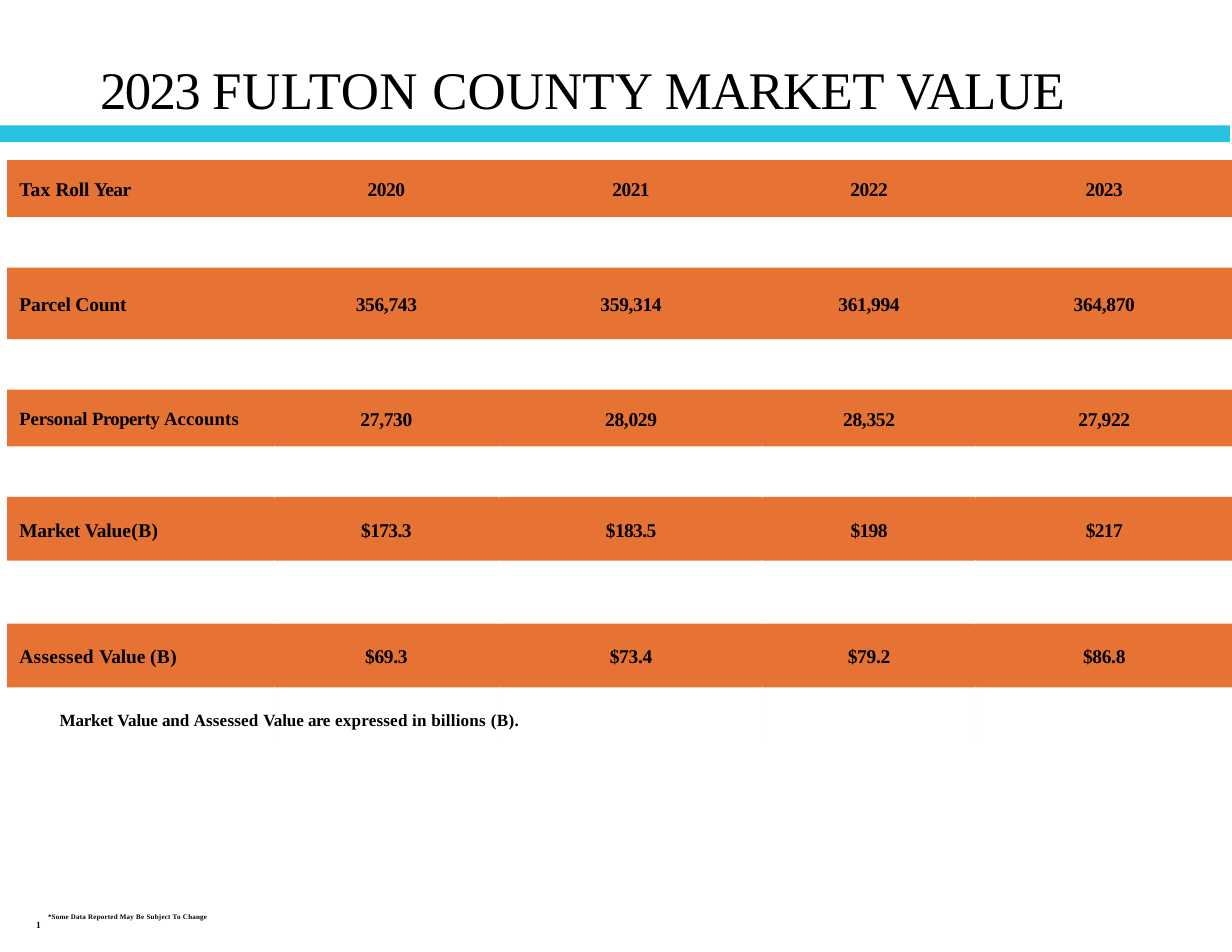
from dataclasses import dataclass

from lxml import etree
from pptx import Presentation
from pptx.dml.color import RGBColor
from pptx.enum.shapes import MSO_SHAPE
from pptx.enum.text import MSO_ANCHOR, MSO_AUTO_SIZE, PP_ALIGN
from pptx.oxml.ns import qn
from pptx.util import Pt

RECTANGLE = MSO_SHAPE.RECTANGLE
TOP = MSO_ANCHOR.TOP
GROW = MSO_AUTO_SIZE.SHAPE_TO_FIT_TEXT
LEFT = PP_ALIGN.LEFT
CENTER = PP_ALIGN.CENTER

FONT = "Times New Roman"
BLACK, WHITE, PALE = "000000", "FFFFFF", "FDFDFD"
ORANGE, CYAN = "E67334", "28C1DF"
PAGE_WIDTH, PAGE_HEIGHT = 792, 612
BAND_LEFT = 4.5
LABEL_LEFT = 11.5
TEXT_HEIGHT = 17.3
COLUMN_CENTERS = (248.4, 405.7, 558.7, 709.9)
SEPARATOR_LEFTS = (176.4, 320.6, 489.8, 627)
SEPARATOR_WIDTH = 0.5
LAST_GAP = 32.5


@dataclass
class Span:
    text: str
    spacing: float


@dataclass
class Band:
    top: float
    height: float
    label: list[Span]
    label_width: float
    values: tuple[str, ...]
    value_spacing: float
    label_size: float = 12.5
    tab: float | None = None

    @property
    def bottom(self) -> float:
        return self.top + self.height

    @property
    def text_top(self) -> float:
        return self.top + self.height / 2 - 9.8


BANDS = [
    Band(103, 36.5, [Span("Tax ", 0.1), Span("Roll ", -0.1), Span("Year", -0.4)], 76.3,
         ("2020", "2021", "2022", "2023"), -0.3),
    Band(172, 46, [Span("Parcel Count", -0.1)], 72,
         ("356,743", "359,314", "361,994", "364,870"), -0.2),
    Band(250.5, 36.5,
         [Span("Personal ", -0.1), Span("Property ", -0.3), Span("Accounts", 0.1)], 145.5,
         ("27,730", "28,029", "28,352", "27,922"), -0.2, label_size=12),
    Band(319.5, 41, [Span("Market ", -0.2), Span("Value\t", -0.1), Span("(B)", 0.3)], 105,
         ("$173.3", "$183.5", "$198", "$217"), -0.4, tab=86.4),
    Band(401, 41, [Span("Assessed ", 0.2), Span("Value ", -0.1), Span("(B)", 0.3)], 108.7,
         ("$69.3", "$73.4", "$79.2", "$86.8"), -0.2),
]
TITLE = [Span("2023 ", -1.1), Span("FULTON ", 0.4), Span("COUNTY ", 0.1),
         Span("MARKET ", -0.4), Span("VALUE", -0.6)]
UNITS_NOTE = [Span("Market ", -0.2), Span("Value and ", -0.1), Span("Assessed ", 0.1),
              Span("Value ", -0.1), Span("are", -0.3), Span(" expressed in billions ", 0.1),
              Span("(B).", 0.2)]
DISCLAIMER = [Span("*Some Data Reported May ", 0.1), Span("Be", 0.2), Span(" Subject ", 0.1),
              Span("To ", 0.2), Span("Change", 0.1)]


def color(value: str) -> RGBColor:
    return RGBColor.from_string(value)


def add_bar(page, left: float, top: float, width: float, height: float, fill: str) -> None:
    bar = page.shapes.add_shape(RECTANGLE, Pt(left), Pt(top), Pt(width), Pt(height))
    bar.shadow.inherit = False
    bar.fill.solid()
    bar.fill.fore_color.rgb = color(fill)
    bar.line.fill.background()


def set_indent(paragraph, margin: float) -> None:
    properties = paragraph._p.get_or_add_pPr()
    properties.set("marL", str(Pt(margin)))
    properties.set("indent", "0")


def add_tab(paragraph, position: float) -> None:
    tabs = etree.SubElement(paragraph._p.get_or_add_pPr(), qn("a:tabLst"))
    etree.SubElement(tabs, qn("a:tab"), pos=str(Pt(position)), algn="l")


def write_spans(paragraph, spans: list[Span], size: float, bold: bool = True) -> None:
    for span in spans:
        run = paragraph.add_run()
        run.text = span.text
        run.font.name = FONT
        run.font.size = Pt(size)
        run.font.bold = bold
        run.font.color.rgb = color(BLACK)
        run._r.get_or_add_rPr().set("spc", str(round(span.spacing * 100)))


def format_frame(frame) -> None:
    frame.word_wrap = True
    frame.auto_size = GROW
    frame.vertical_anchor = TOP
    frame.margin_left = frame.margin_right = frame.margin_bottom = 0
    frame.margin_top = Pt(2.6)


def add_text(page, left: float, top: float, width: float, height: float,
             spans: list[Span], size: float, align=LEFT, indent: float = 1,
             tab: float | None = None):
    box = page.shapes.add_textbox(Pt(left), Pt(top), Pt(width), Pt(height))
    format_frame(box.text_frame)
    paragraph = box.text_frame.paragraphs[0]
    paragraph.alignment = align
    set_indent(paragraph, indent)
    if tab is not None:
        add_tab(paragraph, tab)
    write_spans(paragraph, spans, size)
    return box


def add_title(page) -> None:
    title = page.shapes.title
    title.left, title.top, title.width, title.height = Pt(63.4), Pt(33.8), Pt(633.6), Pt(43.2)
    format_frame(title.text_frame)
    paragraph = title.text_frame.paragraphs[0]
    paragraph.alignment = LEFT
    set_indent(paragraph, 1)
    write_spans(paragraph, TITLE, 34, bold=False)


def add_band_text(page, band: Band) -> None:
    add_text(page, LABEL_LEFT, band.text_top, band.label_width, TEXT_HEIGHT,
             band.label, band.label_size, tab=band.tab)
    for center, value in zip(COLUMN_CENTERS, band.values):
        width = 5.2 * len(value) + 5
        add_text(page, center - width / 2, band.text_top, width, TEXT_HEIGHT,
                 [Span(value, band.value_spacing)], 12.5, CENTER, indent=0)


def add_separators(page, top: float, height: float, fill: str) -> None:
    for left in SEPARATOR_LEFTS:
        add_bar(page, left, top - 0.5, SEPARATOR_WIDTH, height + 1, fill)


def add_footer(page) -> None:
    footer = add_text(page, 22.3, 585.4, 110.9, 12.2, DISCLAIMER, 4.5, indent=8.6)
    footer.text_frame.paragraphs[0].line_spacing = Pt(4.2)
    number = footer.text_frame.add_paragraph()
    number.line_spacing = Pt(6)
    set_indent(number, 1)
    write_spans(number, [Span("1", -0.5)], 6)


def main() -> None:
    deck = Presentation()
    deck.slide_width, deck.slide_height = Pt(PAGE_WIDTH), Pt(PAGE_HEIGHT)
    page = deck.slides.add_slide(deck.slide_layouts[5])
    add_title(page)
    for band in BANDS:
        add_bar(page, BAND_LEFT, band.top, PAGE_WIDTH - BAND_LEFT, band.height, ORANGE)
    for upper, lower in zip(BANDS[2:], BANDS[3:]):
        add_separators(page, upper.bottom, lower.top - upper.bottom, WHITE)
    add_separators(page, BANDS[-1].bottom, LAST_GAP, PALE)
    for band in BANDS:
        add_band_text(page, band)
    add_bar(page, 0, 80.6, 790.6, 10.8, CYAN)
    add_footer(page)
    add_text(page, 37.4, 453.6, 298.8, 15.1, UNITS_NOTE, 11)
    deck.save("out.pptx")


if __name__ == "__main__":
    main()
